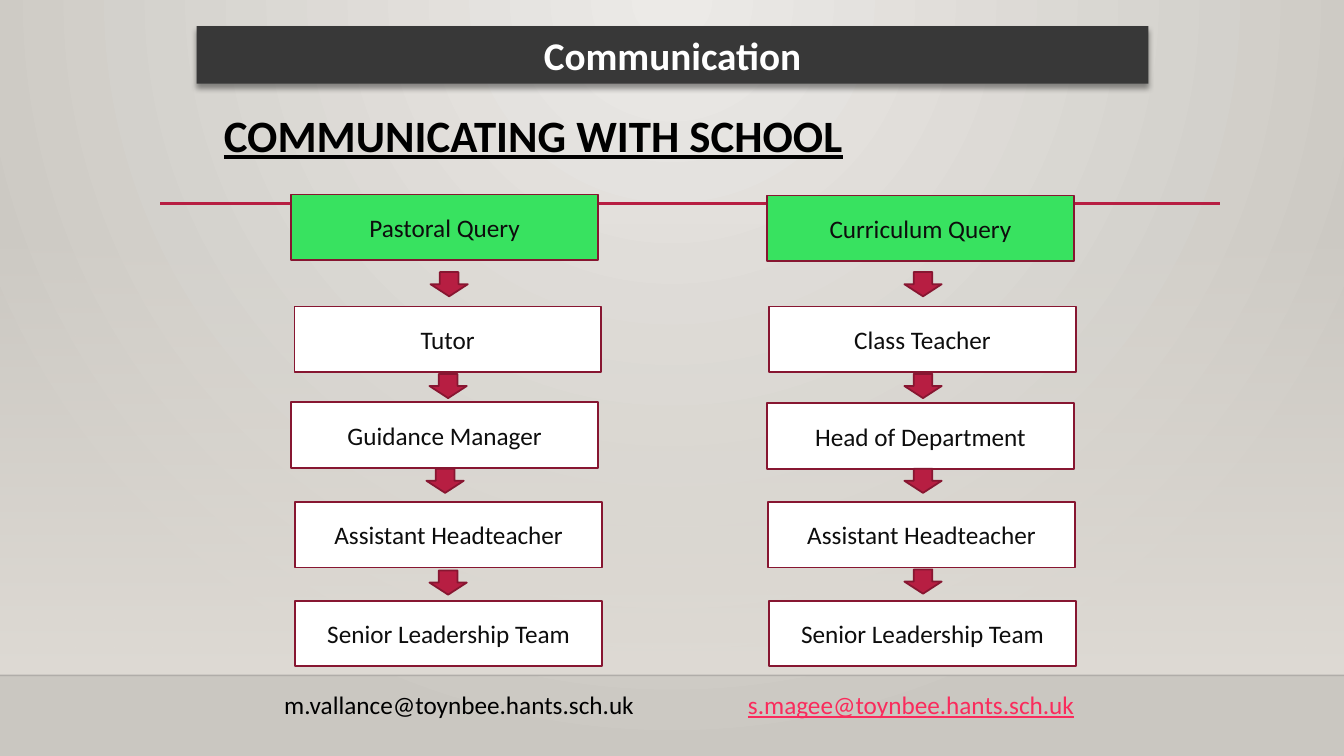
from lxml import etree
from pptx import Presentation, util as u
from pptx.dml.color import RGBColor
from pptx.enum import shapes, text
from pptx.oxml import parse_xml
from pptx.oxml.ns import qn

A = 'xmlns:a="http://schemas.openxmlformats.org/drawingml/2006/main"'
BLACK = RGBColor(0x00, 0x00, 0x00)
WHITE = RGBColor(0xFF, 0xFF, 0xFF)
INK = RGBColor(0x0D, 0x0D, 0x0D)
CHARCOAL = RGBColor(0x38, 0x38, 0x38)
CRIMSON = RGBColor(0xB7, 0x1E, 0x42)
MAROON = RGBColor(0x87, 0x16, 0x31)
GREEN = RGBColor(0x38, 0xE2, 0x60)
PINK = RGBColor(0xFA, 0x2B, 0x5C)
PALE = RGBColor(0xEC, 0xEA, 0xE7)
STONE = RGBColor(0xCA, 0xC7, 0xC1)
SAND = RGBColor(0xDF, 0xDB, 0xD5)
HAIRLINE = RGBColor(0x00, 0x00, 0x01)

prs = Presentation()
prs.slide_width, prs.slide_height = u.Inches(13.33), u.Inches(7.5)
s = prs.slides.add_slide(prs.slide_layouts[5])


def add_text(p, words, **formats):
    r = p.add_run()
    r.text = words
    color = formats.pop("color")
    for name, value in {"name": "Calibri", "size": u.Pt(18), **formats}.items():
        setattr(r.font, name, value)
    r.font.color.rgb = color


def add_block(kind, box, fill=None, line=None):
    sp = s.shapes.add_shape(kind, *map(u.Inches, box))
    sp.shadow.inherit = False
    if fill is not None:
        sp.fill.solid()
        sp.fill.fore_color.rgb = fill
    if line is None:
        sp.line.fill.background()
    else:
        sp.line.color.rgb = line
        sp.line.width = u.Pt(1.25)
    return sp


RECT = shapes.MSO_SHAPE.RECTANGLE
ARROW = shapes.MSO_SHAPE.DOWN_ARROW

backdrop = s.background.fill
backdrop.gradient()
for stop, color in zip(backdrop.gradient_stops, (PALE, STONE)):
    stop.color.rgb = color
grad = s._element.find(".//" + qn("a:gradFill"))
grad.replace(grad.find(qn("a:lin")), parse_xml(
    f'<a:path {A} path="circle"><a:fillToRect l="43000" t="0" r="43000" b="100000"/></a:path>'))

wall = add_block(RECT, (0, 2.21, 13.33, 4.49))
wall.fill.gradient()
wall.fill.gradient_angle = 270
for stop in wall.fill.gradient_stops:
    stop.color.rgb = SAND
clear = wall._element.find(".//" + qn("a:srgbClr"))
etree.SubElement(clear, qn("a:alpha")).set("val", "0")

for x1, x2, y, color, width, alpha in (
    (0, 13.33, 6.7, HAIRLINE, 1, "20000"),
    (1.59, 12.1, 2.02, CRIMSON, 2.5, "100000"),
):
    rule = s.shapes.add_connector(shapes.MSO_CONNECTOR.STRAIGHT, *map(u.Inches, (x1, y, x2, y)))
    rule.line.color.rgb = color
    rule.line.width = u.Pt(width)
    etree.SubElement(rule._element.find(".//" + qn("a:srgbClr")), qn("a:alpha")).set("val", alpha)
    etree.SubElement(rule._element.spPr, qn("a:effectLst"))

title = s.shapes.title
title.left, title.top, title.width, title.height = map(u.Inches, (2.12, 1.08, 8.92, 0.68))
tf = title.text_frame
tf.auto_size = text.MSO_AUTO_SIZE.NONE
tf.vertical_anchor = text.MSO_ANCHOR.TOP
p = tf.paragraphs[0]
p.alignment = text.PP_ALIGN.LEFT
p.line_spacing = 0.9
add_text(p, "COMMUNICATING WITH SCHOOL", size=u.Pt(32), bold=True, underline=True, color=BLACK)

columns = (
    (
        (("Pastoral Query", 2.89, 1.93), ("Tutor", 2.92, 3.04), ("Guidance Manager", 2.89, 3.99),
         ("Assistant Headteacher", 2.93, 4.98), ("Senior Leadership Team", 2.93, 5.96)),
        ((4.27, 2.7), (4.26, 3.71), (4.23, 4.65), (4.26, 5.66)),
    ),
    (
        (("Curriculum Query", 7.61, 1.94), ("Class Teacher", 7.63, 3.04), ("Head of Department", 7.61, 4),
         ("Assistant Headteacher", 7.62, 4.98), ("Senior Leadership Team", 7.63, 5.96)),
        ((8.97, 2.7), (8.97, 3.71), (8.97, 4.65), (8.97, 5.65)),
    ),
)
for steps, arrows in columns:
    for row, (label, x, y) in enumerate(steps):
        step = add_block(RECT, (x, y, 3.04, 0.65), WHITE if row else GREEN, MAROON)
        tf = step.text_frame
        tf.vertical_anchor = text.MSO_ANCHOR.MIDDLE
        tf.paragraphs[0].alignment = text.PP_ALIGN.CENTER
        add_text(tf.paragraphs[0], label, color=INK)
    for x, y in arrows:
        add_block(ARROW, (x, y, 0.37, 0.24), CRIMSON, MAROON)

contacts = s.shapes.add_textbox(*map(u.Inches, (2.72, 6.79, 8.32, 0.7)))
tf = contacts.text_frame
tf.word_wrap = True
p = tf.paragraphs[0]
tabs = etree.SubElement(p._p.get_or_add_pPr(), qn("a:tabLst"))
etree.SubElement(tabs, qn("a:tab"), pos=str(u.Inches(4.6)), algn="l")
add_text(p, "m.vallance@toynbee.hants.sch.uk\t", color=BLACK)
add_text(p, "s.magee@toynbee.hants.sch.uk", color=PINK, underline=True)

banner = add_block(RECT, (1.95, 0.26, 9.44, 0.57), CHARCOAL)
effects = banner._element.spPr.find(qn("a:effectLst"))
effects.append(parse_xml(
    f'<a:outerShdw {A} blurRad="{u.Pt(4)}" dist="{u.Pt(3)}" dir="5400000" rotWithShape="0">'
    '<a:srgbClr val="000000"><a:alpha val="40000"/></a:srgbClr></a:outerShdw>'))
p = banner.text_frame.paragraphs[0]
p.alignment = text.PP_ALIGN.CENTER
add_text(p, "Communication", size=u.Pt(28), bold=True, color=WHITE)

prs.save("out.pptx")
